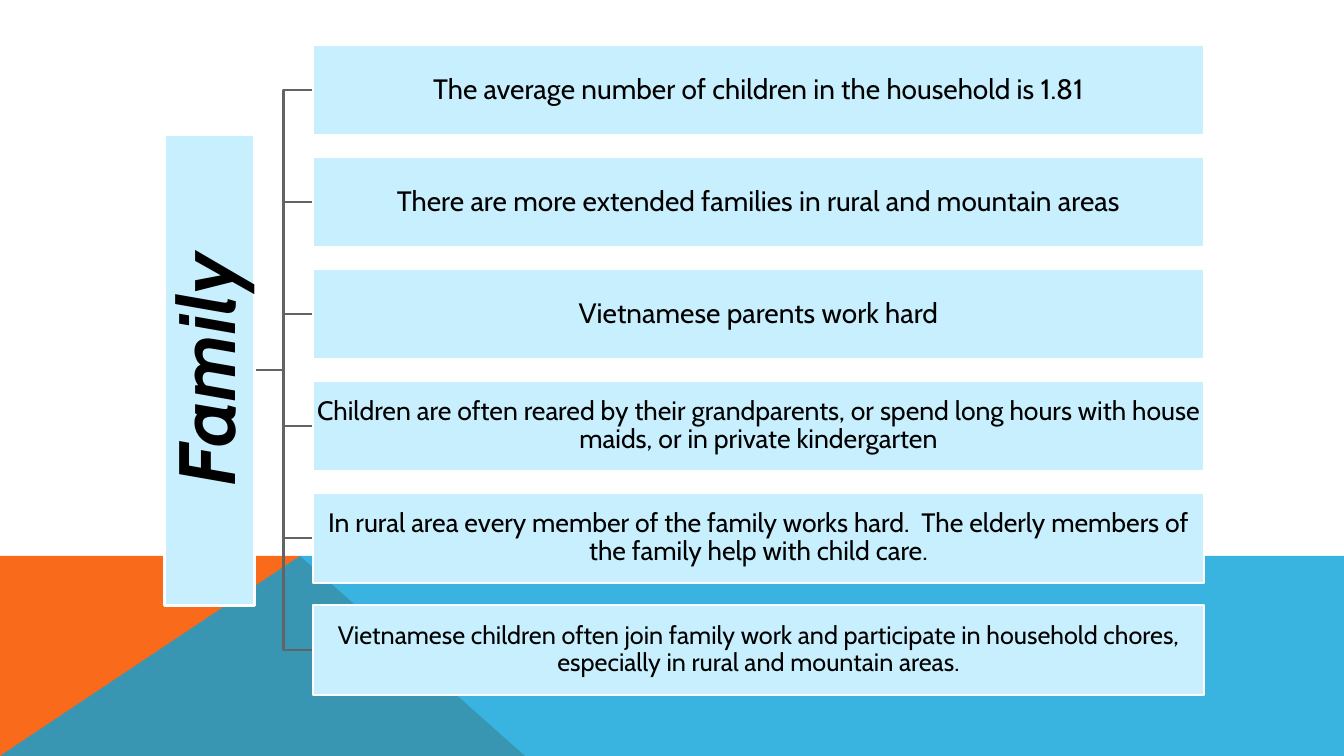
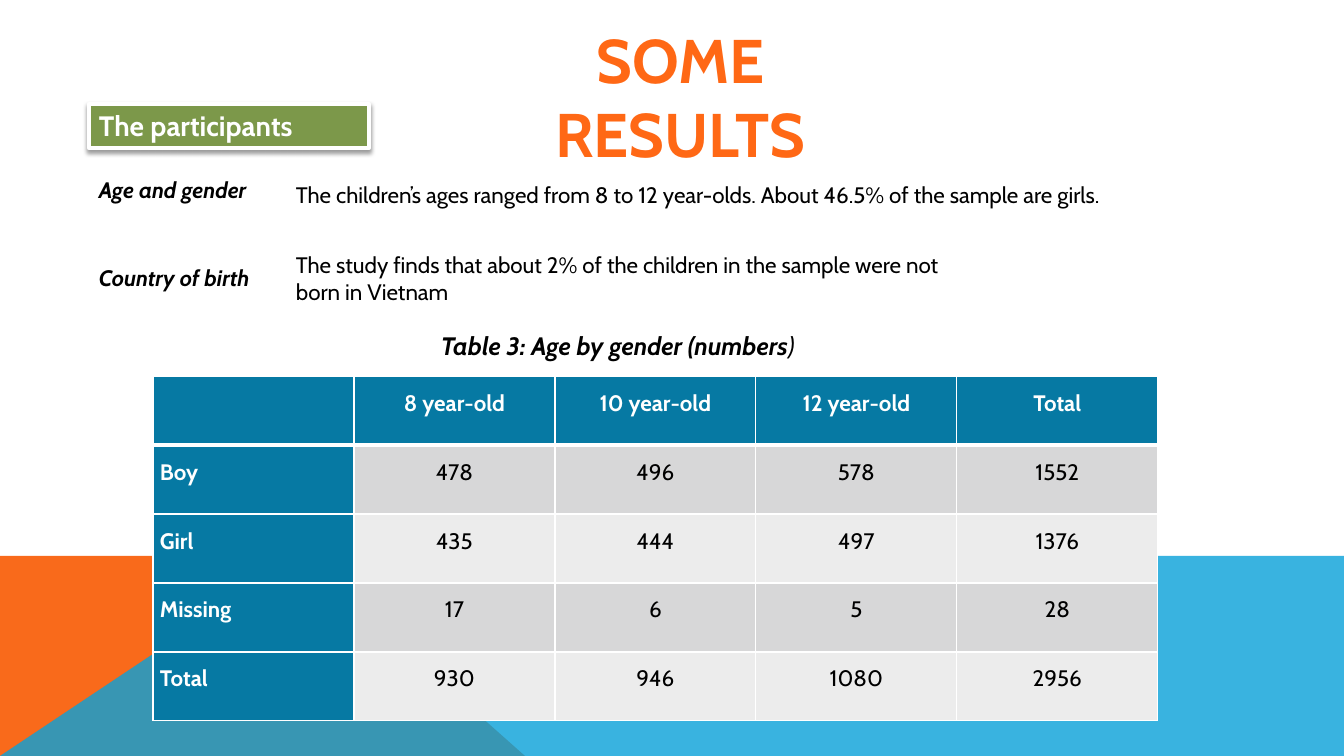
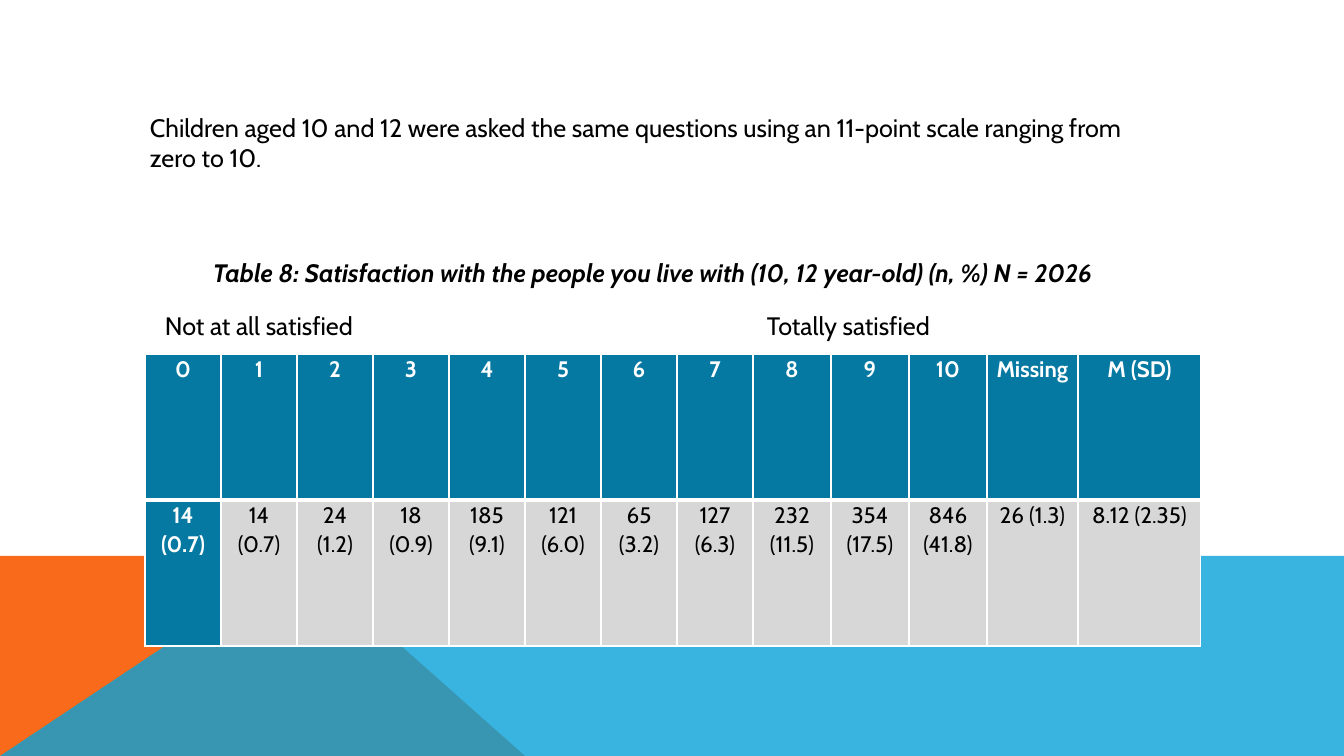
from lxml.etree import SubElement
from pptx import Presentation
from pptx.dml.color import RGBColor
from pptx.enum.shapes import MSO_CONNECTOR as Connector, MSO_SHAPE as Preset
from pptx.enum.text import MSO_ANCHOR as Anchor, MSO_AUTO_SIZE as AutoSize, PP_ALIGN as Align
from pptx.oxml.ns import qn
from pptx.util import Pt

EMU_PER_PX = 914400 / 100.8
TITLE_ONLY, BLANK = 5, 6


def px(length):
    return round(length * EMU_PER_PX)


def rgb(value):
    return RGBColor.from_string(value)


def add_xml(parent, tag, **attributes):
    return SubElement(parent, qn(tag), {name: str(value) for name, value in attributes.items()})


class Deck:
    FONT = "Cabin"
    WHITE, BLACK, GREY = "FFFFFF", "000000", "616365"
    ORANGE, BLUE, TITLE = "F96A1B", "08A1D9", "FF6815"
    PALE_BLUE, GREEN, HEADER = "C8EFFD", "7C984A", "0679A3"
    STRIPES = "D7D7D8", "ECECEC"

    def __init__(self, width, height):
        self.presentation = Presentation()
        self.presentation.slide_width = px(width)
        self.presentation.slide_height = px(height)
        self.slide = None

    def add_slide(self, layout):
        self.slide = self.presentation.slides.add_slide(self.presentation.slide_layouts[layout])

    def master_band(self, points, color, opacity=100):
        """Draw a polygon on the current slide, then move it to the slide master."""
        corners = [(px(x), px(y)) for x, y in points]
        builder = self.slide.shapes.build_freeform(*corners[0])
        builder.add_line_segments(corners[1:], close=True)
        band = builder.convert_to_shape()
        self.paint(band, color)
        if opacity < 100:
            fill_color = band.element.spPr.find(qn("a:solidFill"))[0]
            add_xml(fill_color, "a:alpha", val=opacity * 1000)
        self.presentation.slide_master.shapes.element.append(band.element)

    def paint(self, shape, fill, line=None, line_width=2):
        shape.shadow.inherit = False
        shape.fill.solid()
        shape.fill.fore_color.rgb = rgb(fill)
        if line:
            shape.line.color.rgb = rgb(line)
            shape.line.width = Pt(line_width)
        else:
            shape.line.fill.background()

    def set_text(self, frame, text, size, color=BLACK, bold=False, italic=False, align=Align.LEFT):
        paragraph = frame.paragraphs[0]
        paragraph.text = text
        paragraph.alignment = align
        font = paragraph.font
        font.name, font.size, font.bold, font.italic = self.FONT, Pt(size), bold, italic
        font.color.rgb = rgb(color)
        return paragraph

    def title(self, text, left, top, width, height, side_inset):
        title = self.slide.shapes.title
        title.left, title.top, title.width, title.height = map(px, (left, top, width, height))
        frame = title.text_frame
        frame.word_wrap = True
        frame.auto_size = AutoSize.SHAPE_TO_FIT_TEXT
        frame.vertical_anchor = Anchor.TOP
        frame.margin_left = frame.margin_right = px(side_inset)
        self.set_text(frame, text, 44, self.TITLE, bold=True, align=Align.CENTER)

    def text(self, text, left, top, width, height, size, **style):
        box = self.slide.shapes.add_textbox(*map(px, (left, top, width, height)))
        box.text_frame.word_wrap = True
        return self.set_text(box.text_frame, text, size, **style)

    def rectangle(self, left, top, width, height, fill, line_width=2):
        shape = self.slide.shapes.add_shape(Preset.RECTANGLE, *map(px, (left, top, width, height)))
        self.paint(shape, fill, self.WHITE, line_width)
        return shape

    def node(self, text, left, top, width, height, size, inset=1, **style):
        """Add a box of the tree diagram."""
        shape = self.rectangle(left, top, width, height, self.PALE_BLUE)
        frame = shape.text_frame
        frame.word_wrap = True
        frame.vertical_anchor = Anchor.MIDDLE
        frame.margin_left = frame.margin_right = px(inset)
        frame.margin_top = frame.margin_bottom = px(inset)
        self.set_text(frame, text, size, align=Align.CENTER, **style).line_spacing = 0.9
        return shape

    def label(self, text, left, top, width, height):
        """Add a green section label with a soft shadow."""
        shape = self.rectangle(left, top, width, height, self.GREEN, line_width=3)
        effects = shape.element.spPr.find(qn("a:effectLst"))
        shadow = add_xml(effects, "a:outerShdw", blurRad=Pt(3), dist=Pt(2), dir=5400000, rotWithShape=0)
        add_xml(add_xml(shadow, "a:srgbClr", val=self.BLACK), "a:alpha", val=38000)
        shape.text_frame.vertical_anchor = Anchor.TOP
        self.set_text(shape.text_frame, text, 20, self.WHITE, bold=True)

    def elbow(self, start_x, start_y, end_x, end_y):
        ends = map(px, (start_x, start_y, end_x, end_y))
        connector = self.slide.shapes.add_connector(Connector.ELBOW, *ends)
        connector.line.color.rgb = rgb(self.GREY)
        connector.line.width = Pt(2)
        add_xml(connector.element.spPr, "a:effectLst")

    def cell_borders(self, cell, row):
        """Draw white borders, thick between the header row and the body."""
        properties = cell._tc.get_or_add_tcPr()
        widths = {"L": 1, "R": 1, "T": 3 if row == 1 else 1, "B": 3 if row == 0 else 1}
        for side, width in widths.items():
            line = add_xml(properties, f"a:ln{side}", w=Pt(width))
            add_xml(add_xml(line, "a:solidFill"), "a:srgbClr", val=self.WHITE)

    def table(self, rows, left, top, column_widths, row_height, line_spacing,
              space_before=0, first_column=Align.CENTER):
        height = row_height * len(rows)
        frame = self.slide.shapes.add_table(
            len(rows), len(column_widths), *map(px, (left, top, sum(column_widths), height)))
        table = frame.table
        for column, width in zip(table.columns, column_widths):
            column.width = px(width)
        for row, values in enumerate(rows):
            table.rows[row].height = px(row_height)
            for column, value in enumerate(values):
                cell = table.cell(row, column)
                heading = row == 0 or column == 0
                self.cell_borders(cell, row)
                cell.fill.solid()
                cell.fill.fore_color.rgb = rgb(self.HEADER if heading else self.STRIPES[(row - 1) % 2])
                cell.margin_left = cell.margin_right = px(7)
                cell.margin_top = cell.margin_bottom = 0
                paragraph = self.set_text(
                    cell.text_frame, value, 16, self.WHITE if heading else self.BLACK, bold=heading,
                    align=Align.CENTER if column else first_column)
                paragraph.line_spacing = line_spacing
                paragraph.space_before = Pt(space_before)


def family_slide(deck):
    facts = [
        ("The average number of children in the household is 1.81", 20),
        ("There are more extended families in rural and mountain areas", 20),
        ("Vietnamese parents work hard", 20),
        ("Children are often reared by their grandparents, or spend long hours with house maids, "
         "or in private kindergarten", 19),
        ("In rural area every member of the family works hard.  The elderly members of the family "
         "help with child care.", 19),
        ("Vietnamese children often join family work and participate in household chores, "
         "especially in rural and mountain areas.", 18),
    ]
    left, top, pitch, thickness, hub_length = 313, 45, 112, 90, 471
    hub_x, hub_y = 209, 370
    tops = [top + pitch * index for index in range(len(facts))]
    for fact_top in tops:
        deck.elbow(hub_x + thickness // 2, hub_y, left, fact_top + thickness // 2)
    hub = deck.node("Family", hub_x - hub_length // 2, hub_y - thickness // 2, hub_length, thickness,
                    57, inset=4, bold=True, italic=True)
    hub.rotation = 270
    for (fact, size), fact_top in zip(facts, tops):
        deck.node(fact, left, fact_top, 891, thickness, size)


def results_slide(deck):
    deck.title("SOME RESULTS", 452, 17, 457, 84, side_inset=80)
    deck.label("The participants", 89, 104, 280, 44)
    deck.text("Age and gender", 89, 171, 244, 37, 16, bold=True, italic=True)
    deck.text("The children’s ages ranged from 8 to 12 year-olds. About 46.5% of the sample are girls.",
              286, 176, 836, 64, 16)
    deck.text("Country of birth", 89, 259, 192, 37, 16, bold=True, italic=True)
    deck.text("The study finds that about 2% of the children in the sample were not born in Vietnam",
              286, 246, 684, 64, 16)
    caption = deck.text("Table 3: Age by gender (numbers", 431, 325, 394, 40, 18, bold=True, italic=True)
    bracket = caption.add_run()
    bracket.text = ")"
    bracket.font.bold = False
    deck.table([
        ["", "8 year-old", "10 year-old", "12 year-old", "Total"],
        ["Boy", "478", "496", "578", "1552"],
        ["Girl", "435", "444", "497", "1376"],
        ["Missing", "17", "6", "5", "28"],
        ["Total", "930", "946", "1080", "2956"],
    ], 153, 376, [201] * 5, 69, line_spacing=1.5, first_column=Align.LEFT)


def satisfaction_slide(deck):
    deck.text("Children aged 10 and 12 were asked the same questions using an 11-point scale "
              "ranging from zero to 10.", 140, 107, 1016, 72, 18)
    deck.text("Table 8: Satisfaction with the people you live with (10, 12 year-old) (n, %) N = 2026",
              203, 252, 942, 40, 18, bold=True, italic=True)
    deck.table([
        [*map(str, range(11)), "Missing", "M (SD)"],
        ["14 (0.7)", "14 (0.7)", "24 (1.2)", "18 (0.9)", "185 (9.1)", "121 (6.0)", "65 (3.2)",
         "127 (6.3)", "232 (11.5)", "354 (17.5)", "846 (41.8)", "26 (1.3)", "8.12 (2.35)"],
    ], 145, 354, [76] * 8 + [78] * 3 + [91, 123], 146, line_spacing=1.07, space_before=0.8)
    for end_label, left in (("Not at all satisfied", 155), ("Totally satisfied", 757)):
        deck.text(end_label, left, 305, 300, 40, 18)


def main():
    deck = Deck(1344, 756)
    deck.add_slide(BLANK)
    deck.master_band([(0, 756), (0, 556), (300, 556), (525, 756)], deck.ORANGE)
    deck.master_band([(0, 756), (300, 556), (1344, 556), (1344, 756)], deck.BLUE, opacity=80)
    family_slide(deck)
    deck.add_slide(TITLE_ONLY)
    results_slide(deck)
    deck.add_slide(BLANK)
    satisfaction_slide(deck)
    deck.presentation.save("out.pptx")


if __name__ == "__main__":
    main()
